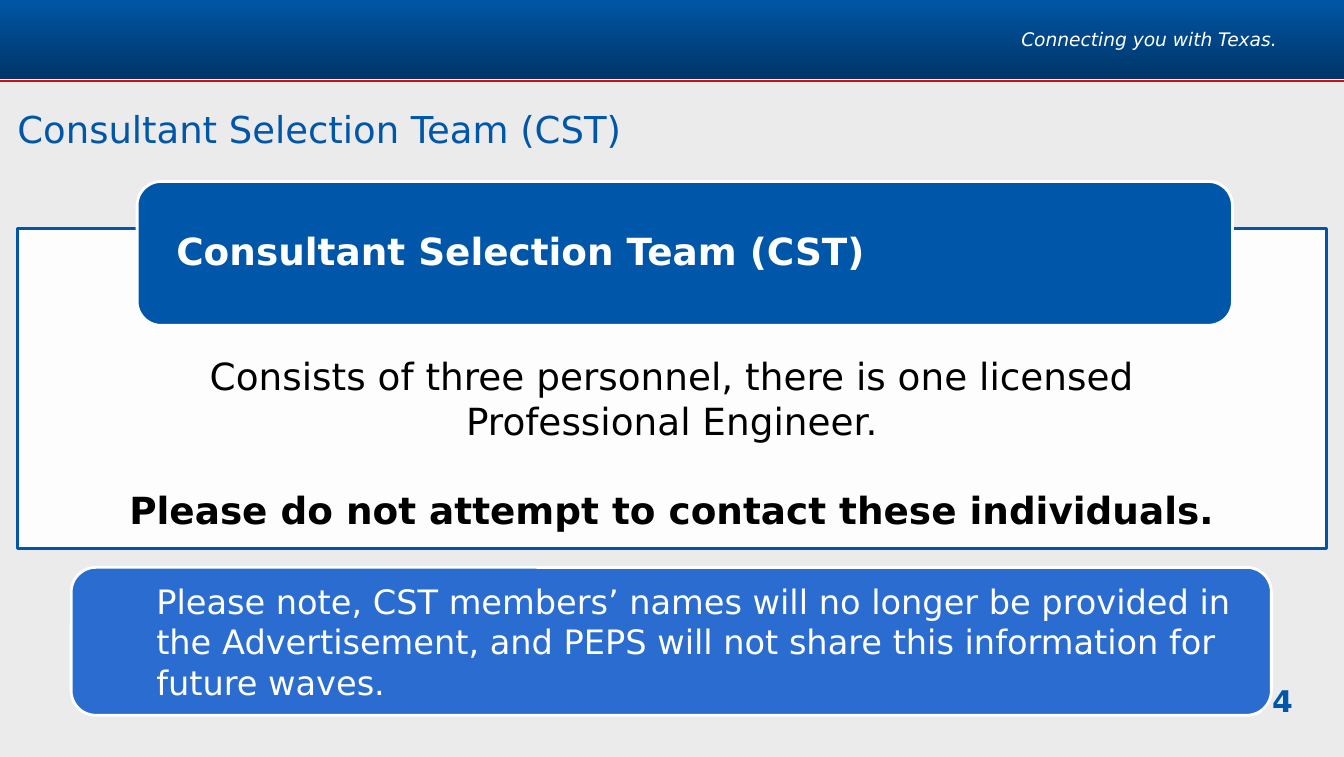
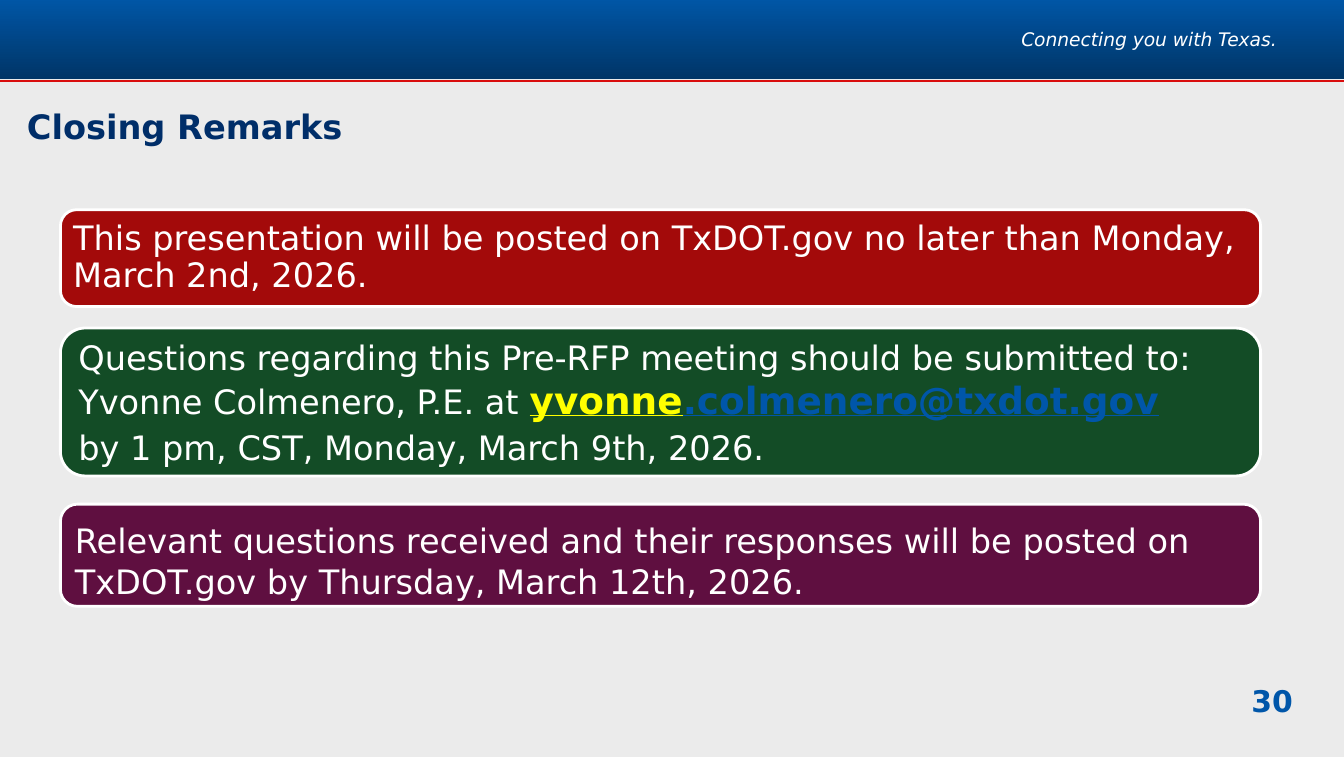
"""Build the consultant selection team slide and the closing remarks slide."""
import pptx
import pptx.util
import pptx.dml.color
import pptx.enum.shapes
import pptx.enum.text
import pptx.oxml
from lxml import etree

Inches = pptx.util.Inches
Pt = pptx.util.Pt
RGB = pptx.dml.color.RGBColor.from_string
KIND = pptx.enum.shapes.MSO_SHAPE
ANCHOR = pptx.enum.text.MSO_ANCHOR
ALIGN = pptx.enum.text.PP_ALIGN

FONT = "DejaVu Sans"
HUES = {
    "page": "EBEBEB", "white": "FFFFFF", "black": "000000",
    "blue": "0056A9", "navy": "002E69", "sky": "2B6CD1",
    "top": "0057A8", "base": "003567", "rule": "D90D0D",
    "red": "A30A0A", "green": "134C26", "plum": "5F0F40", "yellow": "FFFF00",
}


def write(shape, lines, size, hue, pad=(0, 0, 0, 0), anchor=ANCHOR.MIDDLE,
          align=ALIGN.LEFT, bold=False, space=1.0):
    """Fill a shape with one paragraph per line and return its paragraphs."""
    frame = shape.text_frame
    frame.auto_size = pptx.enum.text.MSO_AUTO_SIZE.NONE
    frame.word_wrap = True
    frame.vertical_anchor = anchor
    frame.margin_left, frame.margin_top, frame.margin_right, frame.margin_bottom = map(Inches, pad)
    frame.text = "\n".join(lines)
    for para in frame.paragraphs:
        para.alignment = align
        para.line_spacing = space
        para.font.name = FONT
        para.font.size = Pt(size)
        para.font.bold = bold
        para.font.color.rgb = RGB(HUES[hue])
    return frame.paragraphs


def panel(slide, kind, area, fill, line):
    """Add a filled shape with a thin outline and no shadow."""
    shape = slide.shapes.add_shape(kind, *map(Inches, area))
    shape.shadow.inherit = False
    shape.fill.solid()
    shape.fill.fore_color.rgb = RGB(HUES[fill])
    shape.line.color.rgb = RGB(HUES[line])
    shape.line.width = Pt(1.5)
    return shape


deck = pptx.Presentation()
deck.slide_width = Inches(10)
deck.slide_height = Inches(5.63)
ground = deck.slide_master.background.fill
ground.solid()
ground.fore_color.rgb = RGB(HUES["page"])

heads = [
    ("Consultant Selection Team (CST)", "4", (0.13, 0.8, 9, 0.32), 19.8, "blue", False, (0, 0, 0, 0)),
    ("Closing Remarks", "30", (0.1, 0.74, 5.02, 0.4), 18, "navy", True, (0.1, 0.05, 0.1, 0.05)),
]
slides = []
for title, number, area, size, hue, bold, pad in heads:
    slide = deck.slides.add_slide(deck.slide_layouts[5])
    slides.append(slide)

    band = slide.shapes.add_shape(KIND.RECTANGLE, *map(Inches, (-0.01, -0.03, 10.02, 0.62)))
    band.shadow.inherit = False
    band.line.fill.background()
    band.fill.gradient()
    band.fill.gradient_angle = 270
    for stop, shade in zip(band.fill.gradient_stops, ("top", "base")):
        stop.color.rgb = RGB(HUES[shade])

    rule = slide.shapes.add_connector(
        pptx.enum.shapes.MSO_CONNECTOR.STRAIGHT, *map(Inches, (-0.01, 0.6, 10.01, 0.6)))
    rule.line.color.rgb = RGB(HUES["rule"])
    rule.line.width = Pt(1)
    etree.SubElement(rule._element.spPr, pptx.oxml.ns.qn("a:effectLst"))

    page = slide.shapes.add_textbox(*map(Inches, (8.62, 5.03, 1, 0.32)))
    write(page, [number], 16, "blue", anchor=ANCHOR.BOTTOM, align=ALIGN.RIGHT, bold=True, space=0.9)

    motto = slide.shapes.add_textbox(*map(Inches, (7.17, 0, 2.33, 0.6)))
    words = write(motto, ["Connecting you with Texas."], 10, "white", align=ALIGN.RIGHT, space=0.9)
    words[0].font.italic = True

    head = slide.shapes.title
    head.left, head.top, head.width, head.height = map(Inches, area)
    write(head, [title], size, hue, pad, ANCHOR.BOTTOM, bold=bold)

team, close = slides

frame = panel(team, KIND.RECTANGLE, (0.13, 1.7, 9.74, 2.38), "white", "blue")
shade = frame.fill._xPr.find(".//" + pptx.oxml.ns.qn("a:srgbClr"))
etree.SubElement(shade, pptx.oxml.ns.qn("a:alpha"), val="90000")
facts = write(frame, [
    "Consists of three personnel, there is one licensed Professional Engineer.",
    "Please do not attempt to contact these individuals.",
], 20, "black", (0.7, 0.93, 0.7, 0.14), ANCHOR.TOP, ALIGN.CENTER)
facts[1].font.bold = True
facts[1].space_before = Pt(23.3)

label = panel(team, KIND.ROUNDED_RECTANGLE, (1.02, 1.35, 8.15, 1.07), "blue", "white")
write(label, ["Consultant Selection Team (CST)"], 20, "white", (0.24, 0, 0.24, 0), bold=True, space=0.9)

note = panel(team, KIND.ROUNDED_RECTANGLE, (0.53, 4.22, 8.93, 1.1), "sky", "white")
write(note, [
    "Please note, CST members’ names will no longer be provided in the Advertisement, "
    "and PEPS will not share this information for future waves.",
], 18, "white", (0.58, 0.07, 0.08, 0.07))

cards = [
    (1.56, 0.72, "red", (0.06, 0.06, 0.06, 0.06), 0.9, [
        "This presentation will be posted on TxDOT.gov no later than Monday, March 2nd, 2026."]),
    (2.44, 1.1, "green", (0.08, 0.08, 0.08, 0.08), 1.0, [
        "Questions regarding this Pre-RFP meeting should be submitted to:",
        "Yvonne Colmenero, P.E. at ",
        "by 1 pm, CST, Monday, March 9th, 2026."]),
    (3.75, 0.76, "plum", (0.07, 0.2, 0.07, 0.12), 1.0, [
        "Relevant questions received and their responses will be posted on TxDOT.gov "
        "by Thursday, March 12th, 2026."]),
]
for top, height, fill, pad, space, lines in cards:
    card = panel(close, KIND.ROUNDED_RECTANGLE, (0.45, top, 8.93, height), fill, "white")
    paras = write(card, lines, 18, "white", pad, space=space)
    if fill == "green":
        paras[1].space_after = Pt(3)
        for part, hue in (("yvonne", "yellow"), (".colmenero@txdot.gov", "blue")):
            run = paras[1].add_run()
            run.text = part
            run.font.size = Pt(20)
            run.font.bold = True
            run.font.underline = True
            run.font.color.rgb = RGB(HUES[hue])

deck.save("out.pptx")
